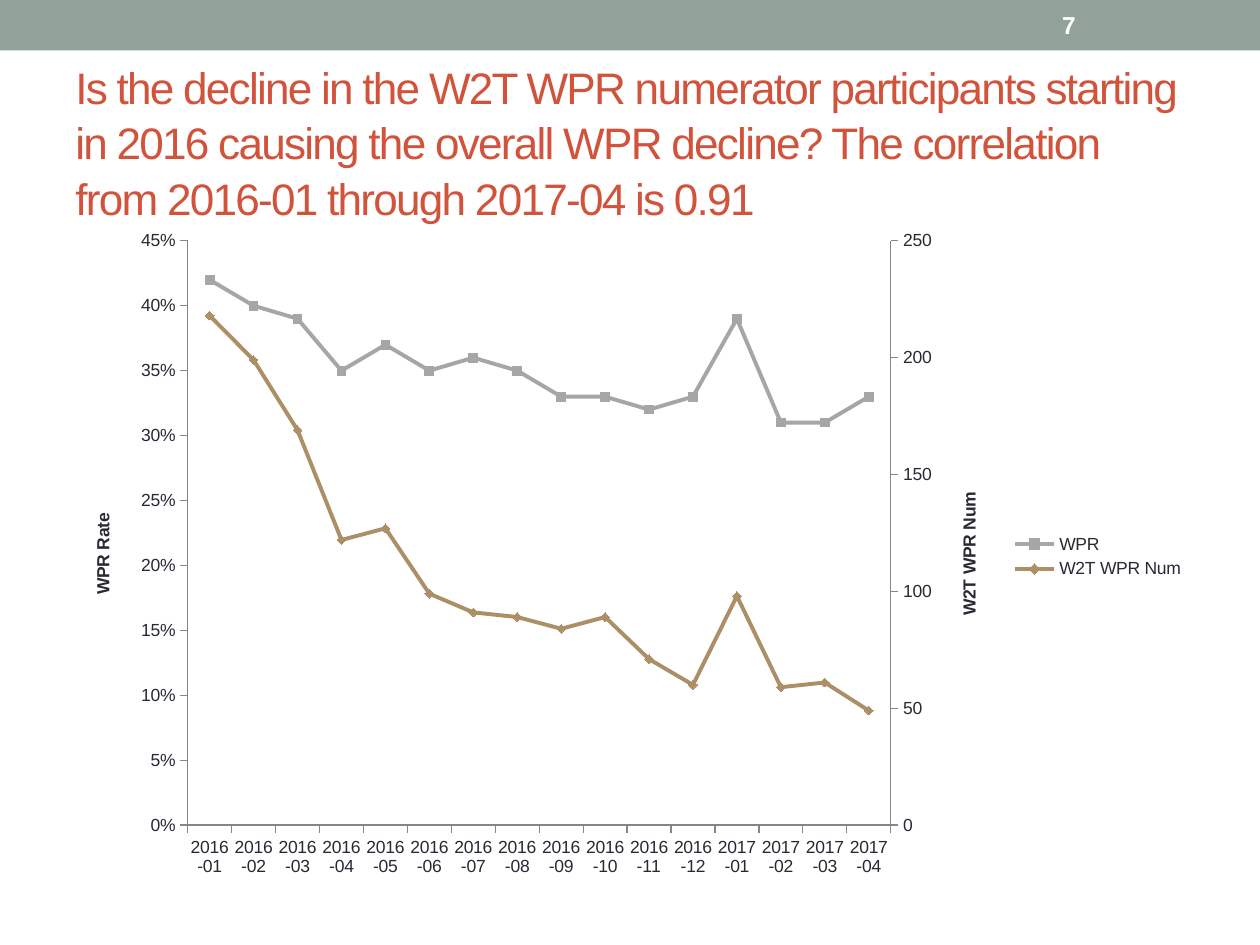
from copy import deepcopy
from dataclasses import dataclass

from pptx import Presentation
from pptx.chart.data import CategoryChartData as Data
from pptx.dml.color import RGBColor as Rgb
from pptx.enum.chart import XL_CHART_TYPE as Kind, XL_LEGEND_POSITION as Spot, XL_TICK_MARK as Tick
from pptx.enum.shapes import MSO_SHAPE as Form
from pptx.enum.text import MSO_ANCHOR as Anchor
from pptx.oxml import parse_xml
from pptx.oxml.ns import nsdecls, qn
from pptx.util import Cm, Pt


@dataclass(frozen=True)
class Theme:
    face: str = "Arial"
    band: str = "93A299"
    title: str = "D2533C"
    ink: str = "292934"
    white: str = "FFFFFF"
    axis: str = "868686"
    rate: str = "A6A6A6"
    count: str = "AD8F67"
    big: float = 25.2
    mid: float = 14
    small: float = 10


class Deck:
    """Hold the theme and the current slide, and add elements to it."""

    def __init__(self, theme):
        self.theme = theme
        self.file = Presentation()
        self.file.slide_width, self.file.slide_height = Cm(25.4), Cm(19.05)
        self.slide = self.file.slides.add_slide(self.file.slide_layouts[6])

    def font(self, font, size, color, bold=False):
        font.name, font.size, font.bold = self.theme.face, Pt(size), bold
        font.color.rgb = Rgb.from_string(color)

    def band(self, box, color):
        shape = self.slide.shapes.add_shape(Form.RECTANGLE, *map(Cm, box))
        shape.shadow.inherit = False
        shape.fill.solid()
        shape.fill.fore_color.rgb = Rgb.from_string(color)
        shape.line.fill.background()

    def text(self, box, words, size, color, bold=False, track=0, lead=1.0):
        frame = self.slide.shapes.add_textbox(*map(Cm, box)).text_frame
        frame.word_wrap = True
        frame.vertical_anchor = Anchor.MIDDLE
        para = frame.paragraphs[0]
        para.line_spacing = lead
        self.font(para.font, size, color, bold)
        run = para.add_run()
        run.text = words
        if track:
            run._r.get_or_add_rPr().set("spc", str(track))

    def axis(self, axis):
        axis.has_major_gridlines = False
        axis.major_tick_mark, axis.minor_tick_mark = Tick.OUTSIDE, Tick.NONE
        axis.format.line.color.rgb = Rgb.from_string(self.theme.axis)
        axis.format.line.width = Pt(0.75)

    def chart(self, box, cats, rows, names, tops, steps, plot):
        data = Data()
        data.categories = cats
        for name, vals, form, _ in rows:
            data.add_series(name, vals, form)
        chart = self.slide.shapes.add_chart(Kind.LINE, *map(Cm, box), data).chart
        self.font(chart.font, self.theme.small, self.theme.ink)
        chart.has_title = False
        chart.has_legend = True
        chart.legend.position = Spot.RIGHT
        chart.legend.include_in_layout = False
        for line, row in zip(chart.plots[0].series, rows):
            line.smooth = False
            line.marker.style = None
            line.format.line.color.rgb = Rgb.from_string(row[3])
            line.format.line.width = Pt(2.25)
        self.axis(chart.category_axis)
        left = chart.value_axis
        self.axis(left)
        left.minimum_scale, left.maximum_scale, left.major_unit = 0, tops[0], steps[0]
        left.tick_labels.number_format = rows[0][2]
        left.tick_labels.number_format_is_linked = False
        para = left.axis_title.text_frame.paragraphs[0]
        para.text = names[0]
        self.font(para.font, self.theme.small, self.theme.ink, True)
        self.split(chart, names[1], tops[1], steps[1], rows[1][2])
        self.place(chart, plot)

    def split(self, chart, name, top, step, form):
        area = chart._chartSpace.chart.plotArea
        first = area.find(qn("c:lineChart"))
        twin = deepcopy(first)
        first.remove(first.findall(qn("c:ser"))[1])
        twin.remove(twin.find(qn("c:ser")))
        first.addnext(twin)
        cat, val = (area.find(qn(tag)) for tag in ("c:catAx", "c:valAx"))
        right, base = deepcopy(val), deepcopy(cat)
        val.addnext(right)
        right.addnext(base)
        ids = {cat.find(qn("c:axId")).get("val"): "5001", val.find(qn("c:axId")).get("val"): "5002"}
        for part in (twin, right, base):
            for node in part.iter(qn("c:axId"), qn("c:crossAx")):
                node.set("val", ids[node.get("val")])
        base.find(qn("c:delete")).set("val", "1")
        for tag, value in (("axPos", "r"), ("crosses", "max"), ("majorUnit", str(step))):
            right.find(qn("c:" + tag)).set("val", value)
        right.find(qn("c:scaling")).find(qn("c:max")).set("val", str(top))
        right.find(qn("c:numFmt")).set("formatCode", form)
        next(right.iter(qn("a:t"))).text = name

    def place(self, chart, plot):
        area = chart._chartSpace.chart.plotArea
        old = area.find(qn("c:layout"))
        if old is not None:
            area.remove(old)
        sides = "".join(f'<c:{key} val="{val}"/>' for key, val in zip("xywh", plot))
        area.insert(0, parse_xml(
            f'<c:layout {nsdecls("c")}><c:manualLayout><c:layoutTarget val="inner"/>'
            f'<c:xMode val="edge"/><c:yMode val="edge"/>{sides}</c:manualLayout></c:layout>'))

    def save(self):
        self.file.save("out.pptx")


def main():
    theme = Theme()
    deck = Deck(theme)
    deck.band((0, 0, 25.4, 1.02), theme.band)
    deck.text((1.27, 1.47, 22.86, 2.74),
              "Is the decline in the W2T WPR numerator participants starting in 2016 causing "
              "the overall WPR decline? The correlation from 2016-01 through 2017-04 is 0.91",
              theme.big, theme.title, track=-100, lead=1.05)
    deck.text((21.16, 0.05, 2.97, 0.91), "7", theme.mid, theme.white, bold=True)
    cats = [f"{2016 + n // 12}-{n % 12 + 1:02}" for n in range(16)]
    rate = (0.42, 0.40, 0.39, 0.35, 0.37, 0.35, 0.36, 0.35,
            0.33, 0.33, 0.32, 0.33, 0.39, 0.31, 0.31, 0.33)
    count = (218, 199, 169, 122, 127, 99, 91, 89, 84, 89, 71, 60, 98, 59, 61, 49)
    deck.chart((1.27, 4.45, 22.86, 13.54), cats,
               (("WPR", rate, "0%", theme.rate), ("W2T WPR Num", count, "General", theme.count)),
               ("WPR Rate", "W2T WPR Num"), (0.45, 250), (0.05, 50), (0.11, 0.03, 0.62, 0.87))
    deck.save()


if __name__ == "__main__":
    main()
